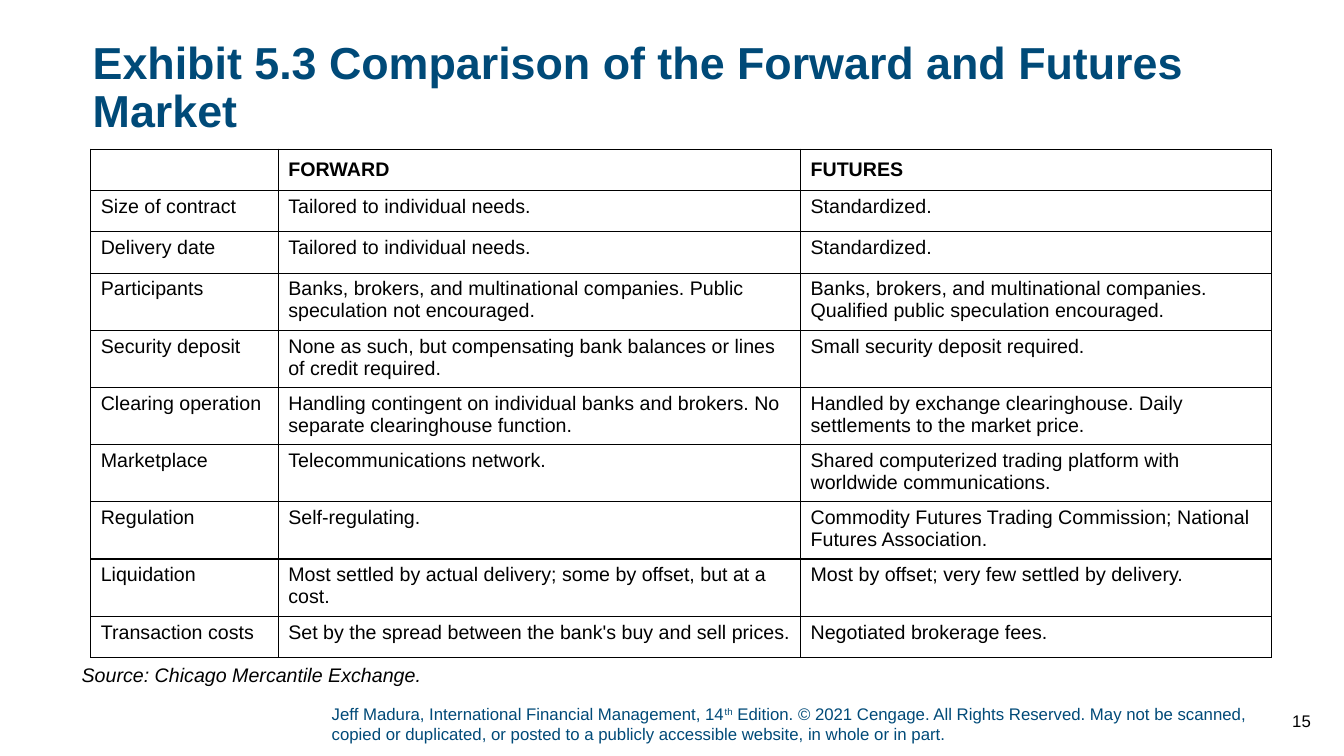
"""Build the slide that compares the forward and futures markets."""
from lxml import etree
from pptx import Presentation
from pptx.dml.color import RGBColor
from pptx.enum.text import MSO_ANCHOR, PP_ALIGN
from pptx.oxml.ns import qn
from pptx.util import Inches, Pt

TOP, MIDDLE, BOTTOM = MSO_ANCHOR.TOP, MSO_ANCHOR.MIDDLE, MSO_ANCHOR.BOTTOM
LEFT, RIGHT = PP_ALIGN.LEFT, PP_ALIGN.RIGHT

COLORS = {"blue": "004A78", "black": "000000", "white": "FFFFFF"}
FONT = "Arial"
TITLE = "Exhibit 5.3 Comparison of the Forward and Futures Market"
SOURCE = "Source: Chicago Mercantile Exchange."
COPYRIGHT = [
    "Jeff Madura, International Financial Management, 14",
    "th",
    " Edition. © 2021 Cengage. All Rights Reserved. May not be scanned, copied or "
    "duplicated, or posted to a publicly accessible website, in whole or in part.",
]
PAGE = "15"
ROWS = [
    ("", "FORWARD", "FUTURES"),
    ("Size of contract", "Tailored to individual needs.", "Standardized."),
    ("Delivery date", "Tailored to individual needs.", "Standardized."),
    ("Participants",
     "Banks, brokers, and multinational companies. Public speculation not encouraged.",
     "Banks, brokers, and multinational companies. Qualified public speculation encouraged."),
    ("Security deposit",
     "None as such, but compensating bank balances or lines of credit required.",
     "Small security deposit required."),
    ("Clearing operation",
     "Handling contingent on individual banks and brokers. No separate clearinghouse function.",
     "Handled by exchange clearinghouse. Daily settlements to the market price."),
    ("Marketplace", "Telecommunications network.",
     "Shared computerized trading platform with worldwide communications."),
    ("Regulation", "Self-regulating.",
     "Commodity Futures Trading Commission; National Futures Association."),
    ("Liquidation",
     "Most settled by actual delivery; some by offset, but at a cost.",
     "Most by offset; very few settled by delivery."),
    ("Transaction costs",
     "Set by the spread between the bank's buy and sell prices.",
     "Negotiated brokerage fees."),
]
COL_WIDTHS = (1.86, 5.18, 4.67)
ROW_HEIGHT = 0.41
TABLE_LEFT, TABLE_TOP = 0.9, 1.48


def style(p, size, color="black", bold=False, italic=False):
    for r in p.runs:
        r.font.name, r.font.size = FONT, Pt(size)
        r.font.bold, r.font.italic = bold, italic
        r.font.color.rgb = RGBColor.from_string(COLORS[color])


def add_text(slide, box, parts, size, color="black", anchor=TOP, align=LEFT,
             insets=(0, 0, 0, 0), spacing=1.0, **look):
    tf = slide.shapes.add_textbox(*map(Inches, box)).text_frame
    tf.word_wrap, tf.vertical_anchor = True, anchor
    tf.margin_left, tf.margin_top, tf.margin_right, tf.margin_bottom = map(Inches, insets)
    p = tf.paragraphs[0]
    p.alignment, p.line_spacing = align, spacing
    for part in parts:
        p.add_run().text = part
    style(p, size, color, **look)
    return p


def add_borders(cell):
    tc_pr = cell._tc.get_or_add_tcPr()
    for side in ("a:lnL", "a:lnR", "a:lnT", "a:lnB"):
        ln = etree.SubElement(tc_pr, qn(side), w=str(Pt(1)))
        fill = etree.SubElement(ln, qn("a:solidFill"))
        etree.SubElement(fill, qn("a:srgbClr"), val=COLORS["black"])


def add_comparison(slide):
    table = slide.shapes.add_table(
        len(ROWS), len(COL_WIDTHS), Inches(TABLE_LEFT), Inches(TABLE_TOP),
        Inches(sum(COL_WIDTHS)), Inches(ROW_HEIGHT * len(ROWS))).table
    table.first_row = table.horz_banding = False
    for column, width in zip(table.columns, COL_WIDTHS):
        column.width = Inches(width)
    for i, row in enumerate(ROWS):
        table.rows[i].height = Inches(ROW_HEIGHT)
        for j, text in enumerate(row):
            cell = table.cell(i, j)
            add_borders(cell)
            cell.fill.solid()
            cell.fill.fore_color.rgb = RGBColor.from_string(COLORS["white"])
            cell.vertical_anchor = TOP if i else MIDDLE
            cell.text_frame.text = text
            style(cell.text_frame.paragraphs[0], 14, bold=i == 0)


def main():
    prs = Presentation()
    prs.slide_width, prs.slide_height = Inches(13.33), Inches(7.5)
    slide = prs.slides.add_slide(prs.slide_layouts[6])
    p = add_text(slide, (3.29, 6.98, 9.24, 0.45), COPYRIGHT, 12, "blue",
                 anchor=BOTTOM, insets=(0, 0, 0, 0.05))
    p.runs[1]._r.get_or_add_rPr().set("baseline", "30000")
    add_text(slide, (0.92, 0.4, 12.03, 0.88), [TITLE], 32, "blue", spacing=0.9, bold=True)
    add_comparison(slide)
    add_text(slide, (0.81, 6.6, 11.72, 0.25), [SOURCE], 14, spacing=0.9, italic=True)
    add_text(slide, (12.56, 6.95, 0.54, 0.4), [PAGE], 12, anchor=MIDDLE, align=RIGHT,
             insets=(0.1, 0.05, 0.1, 0.05))
    prs.save("out.pptx")


if __name__ == "__main__":
    main()
